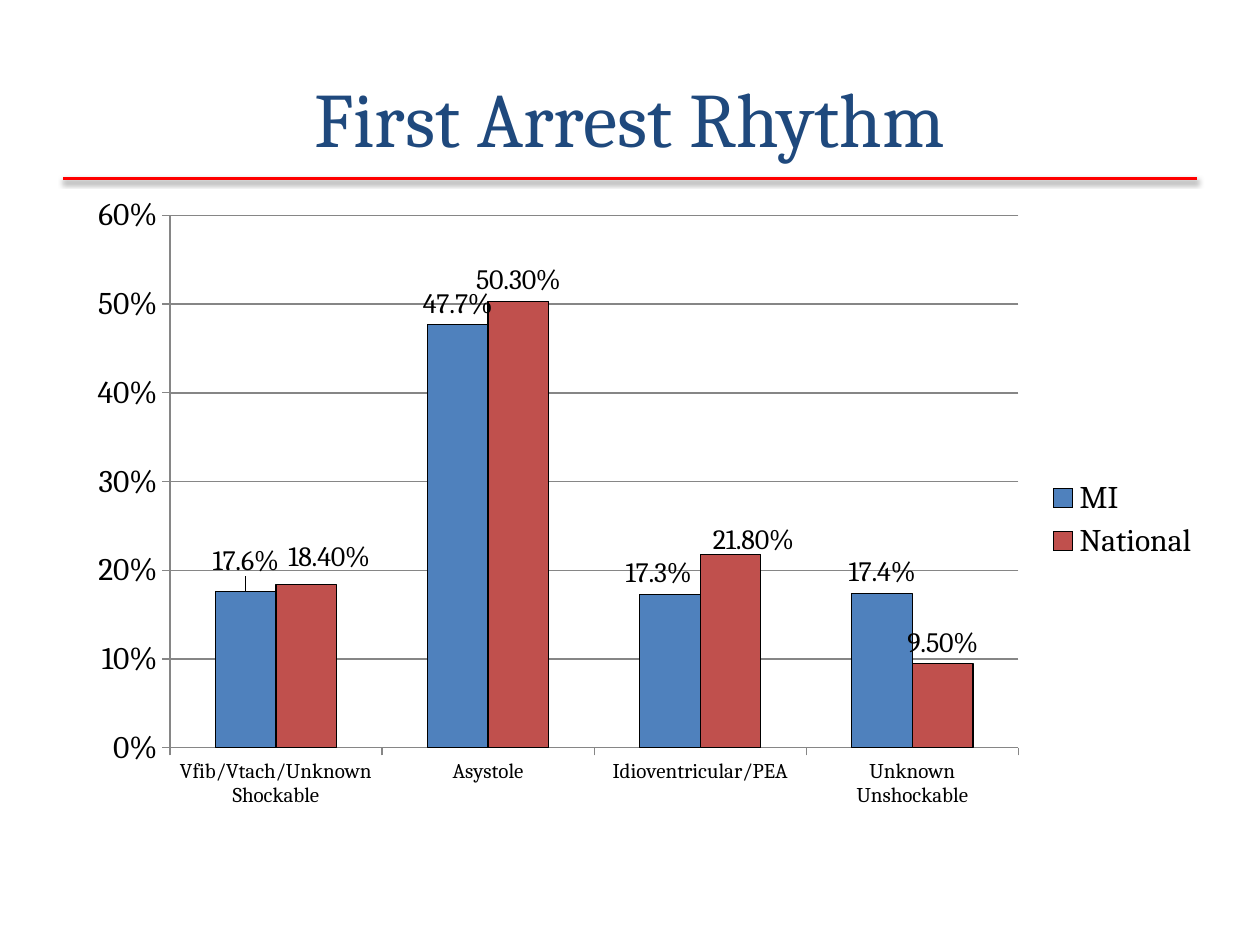
from lxml.etree import SubElement
from pptx import Presentation
from pptx.chart.data import CategoryChartData
from pptx.dml.color import RGBColor
from pptx.enum.chart import XL_CHART_TYPE, XL_LABEL_POSITION, XL_LEGEND_POSITION, XL_TICK_MARK
from pptx.enum.shapes import MSO_CONNECTOR
from pptx.enum.text import MSO_ANCHOR, PP_ALIGN
from pptx.oxml import parse_xml
from pptx.oxml.ns import nsdecls, qn
from pptx.util import Pt

FONT = "Cambria"
COLORS = {"title": "1F497D", "rule": "FF0000", "text": "000000",
          "grid": "868686", "MI": "4F81BD", "National": "C0504D"}
TITLE = "First Arrest Rhythm"
RHYTHMS = ["Vfib/Vtach/Unknown Shockable", "Asystole", "Idioventricular/PEA", "Unknown Unshockable"]
SERIES = [
    ("MI", "0.0%", [0.176, 0.477, 0.173, 0.174]),
    ("National", "0.00%", [0.184, 0.503, 0.218, 0.095]),
]
LABEL_SHIFTS = {
    "MI": {0: (0, -0.015), 2: (-0.01, 0)},
    "National": {0: (0.02, -0.01), 2: (0.02, 0.01)},
}
PLOT_AREA = {"layoutTarget": "inner", "xMode": "edge", "yMode": "edge",
             "x": 0.085, "y": 0.04, "w": 0.745, "h": 0.805}


def color(name):
    return RGBColor.from_string(COLORS[name])


def style_font(font, size, name="text"):
    for attribute, value in {"name": FONT, "size": Pt(size), "bold": False}.items():
        setattr(font, attribute, value)
    font.color.rgb = color(name)


def style_line(line, name, width):
    line.color.rgb = color(name)
    line.width = Pt(width)


def manual_layout(values):
    layout = parse_xml(f"<c:layout {nsdecls('c')}/>")
    manual = SubElement(layout, qn("c:manualLayout"))
    for tag, value in values.items():
        SubElement(manual, qn(f"c:{tag}")).set("val", str(value))
    return layout


def add_title(slide):
    heading = slide.shapes.add_textbox(Pt(36), Pt(21.6), Pt(648), Pt(90))
    frame = heading.text_frame
    frame.word_wrap = True
    frame.vertical_anchor = MSO_ANCHOR.MIDDLE
    paragraph = frame.paragraphs[0]
    paragraph.text = TITLE
    paragraph.alignment = PP_ALIGN.CENTER
    style_font(paragraph.font, 44, "title")


def add_rule(slide):
    rule = slide.shapes.add_connector(MSO_CONNECTOR.STRAIGHT, Pt(36), Pt(102), Pt(684), Pt(102))
    style_line(rule.line, "rule", 2)
    rule._element.spPr.append(parse_xml(
        f'<a:effectLst {nsdecls("a")}><a:outerShdw blurRad="39370" dist="20320" dir="5400000" '
        'rotWithShape="0"><a:srgbClr val="000000"><a:alpha val="38000"/></a:srgbClr>'
        '</a:outerShdw></a:effectLst>'))


def style_axes(chart):
    for axis, size in ((chart.category_axis, 12), (chart.value_axis, 18)):
        style_font(axis.tick_labels.font, size)
        style_line(axis.format.line, "grid", 0.75)
        axis.major_tick_mark = XL_TICK_MARK.OUTSIDE
        axis.minor_tick_mark = XL_TICK_MARK.NONE
    scale = chart.value_axis
    for attribute, value in {"minimum_scale": 0, "maximum_scale": 0.6, "major_unit": 0.1,
                             "has_major_gridlines": True}.items():
        setattr(scale, attribute, value)
    scale.tick_labels.number_format = "0%"
    scale.tick_labels.number_format_is_linked = False
    style_line(scale.major_gridlines.format.line, "grid", 0.75)


def style_series(series, number_format):
    series.format.fill.solid()
    series.format.fill.fore_color.rgb = color(series.name)
    style_line(series.format.line, "text", 0.75)
    labels = series.data_labels
    for attribute, value in {"show_value": True, "number_format": number_format,
                             "number_format_is_linked": False,
                             "position": XL_LABEL_POSITION.OUTSIDE_END}.items():
        setattr(labels, attribute, value)
    style_font(labels.font, 16)
    for index, (x, y) in LABEL_SHIFTS[series.name].items():
        label = series.points[index].data_label
        label.position = XL_LABEL_POSITION.OUTSIDE_END
        style_font(label.font, 16)
        position = series._element.xpath(f"c:dLbls/c:dLbl/c:idx[@val='{index}']")[0]
        position.addnext(manual_layout({"x": x, "y": y}))


def add_rhythm_chart(slide):
    data = CategoryChartData()
    data.categories = RHYTHMS
    for name, number_format, values in SERIES:
        data.add_series(name, values, number_format)
    chart = slide.shapes.add_chart(XL_CHART_TYPE.COLUMN_CLUSTERED, Pt(41.76), Pt(108),
                                   Pt(650.88), Pt(378), data).chart
    style_font(chart.font, 18)
    chart.has_title = False
    chart.has_legend = True
    chart.legend.position = XL_LEGEND_POSITION.RIGHT
    chart.legend.include_in_layout = False
    style_font(chart.legend.font, 18)
    style_axes(chart)
    plot = chart.plots[0]
    plot.gap_width = 150
    plot.overlap = 0
    plot.vary_by_categories = False
    for series, (_, number_format, _) in zip(plot.series, SERIES):
        style_series(series, number_format)
    plot_area = chart._chartSpace.chart.plotArea
    for layout in plot_area.findall(qn("c:layout")):
        plot_area.remove(layout)
    plot_area.insert(0, manual_layout(PLOT_AREA))


def main():
    deck = Presentation()
    deck.slide_width, deck.slide_height = Pt(720), Pt(540)
    slide = deck.slides.add_slide(deck.slide_layouts[6])
    add_rule(slide)
    add_title(slide)
    add_rhythm_chart(slide)
    deck.save("out.pptx")


if __name__ == "__main__":
    main()
